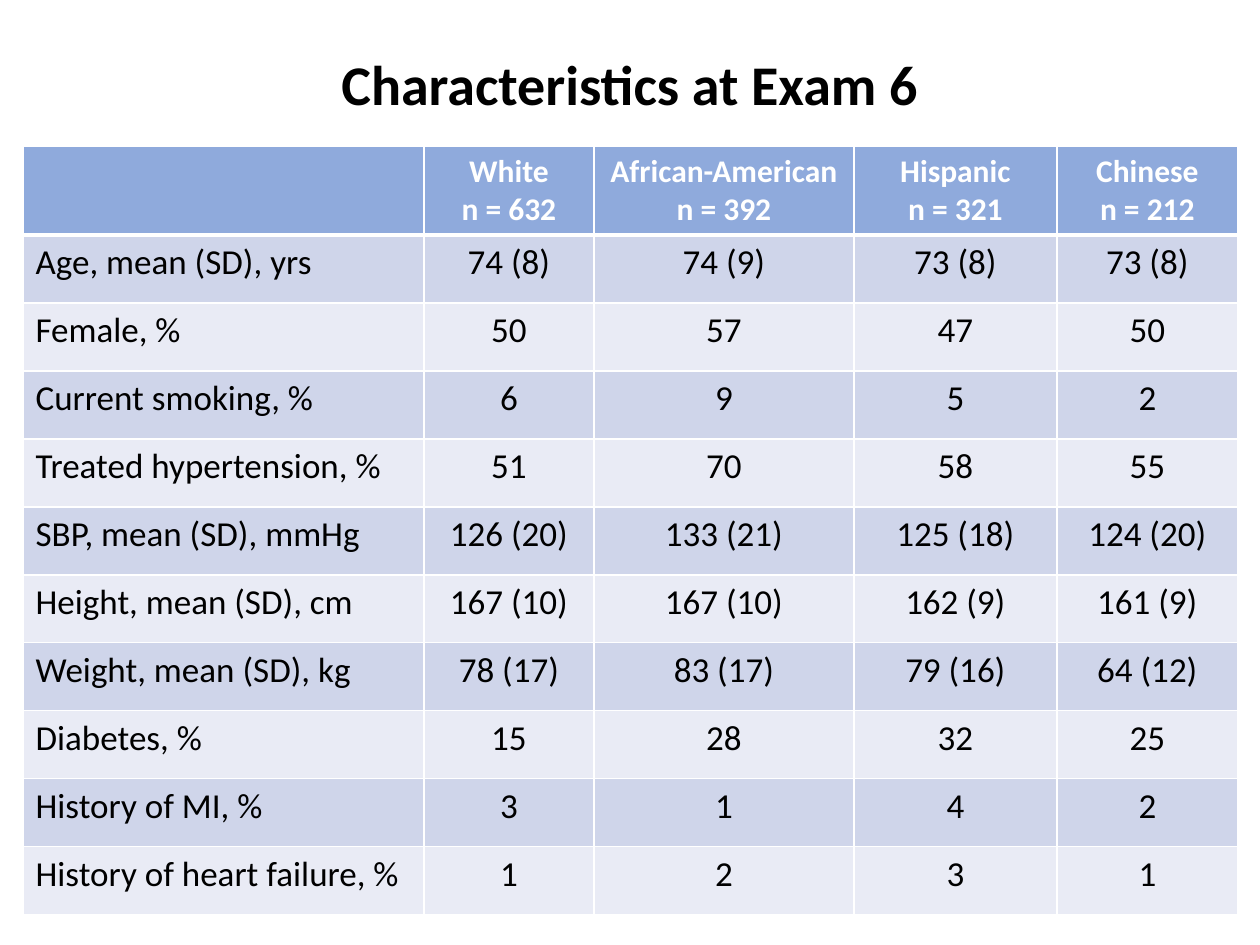
from dataclasses import dataclass

from lxml import etree
from pptx import Presentation
from pptx.dml.color import RGBColor
from pptx.enum.text import MSO_ANCHOR, PP_ALIGN
from pptx.oxml.ns import qn
from pptx.util import Emu, Pt

LEFT, CENTER = PP_ALIGN.LEFT, PP_ALIGN.CENTER
MIDDLE = MSO_ANCHOR.MIDDLE
EMU_PER_PX = 914400 / 126
FONT = "Calibri"
COLORS = {
    "text": "000000",
    "white": "FFFFFF",
    "header": "8FAADC",
    "odd": "CFD5EA",
    "even": "E9EBF5",
}


@dataclass(frozen=True)
class Style:
    size: int
    color: str
    bold: bool


@dataclass(frozen=True)
class Group:
    name: str
    n: int
    width: int


@dataclass(frozen=True)
class Measure:
    label: str
    values: tuple[str, ...]


TITLE = Style(32, "text", True)
HEADER = Style(18, "white", True)
BODY = Style(20, "text", False)

LABEL_WIDTH, HEADER_HEIGHT, ROW_HEIGHT = 401, 89, 68
GROUPS = [
    Group("White", 632, 170),
    Group("African-American", 392, 260),
    Group("Hispanic", 321, 203),
    Group("Chinese", 212, 181),
]
MEASURES = [
    Measure("Age, mean (SD), yrs", ("74 (8)", "74 (9)", "73 (8)", "73 (8)")),
    Measure("Female, %", ("50", "57", "47", "50")),
    Measure("Current smoking, %", ("6", "9", "5", "2")),
    Measure("Treated hypertension, %", ("51", "70", "58", "55")),
    Measure("SBP, mean (SD), mmHg", ("126 (20)", "133 (21)", "125 (18)", "124 (20)")),
    Measure("Height, mean (SD), cm", ("167 (10)", "167 (10)", "162 (9)", "161 (9)")),
    Measure("Weight, mean (SD), kg", ("78 (17)", "83 (17)", "79 (16)", "64 (12)")),
    Measure("Diabetes, %", ("15", "28", "32", "25")),
    Measure("History of MI, %", ("3", "1", "4", "2")),
    Measure("History of heart failure, %", ("1", "2", "3", "1")),
]


def px(n: int) -> Emu:
    """Turn pixels into EMU."""
    return Emu(round(n * EMU_PER_PX))


def add_text(tf, lines: list[str], style: Style, align) -> None:
    """Write one paragraph per line."""
    for i, line in enumerate(lines):
        p = tf.add_paragraph() if i else tf.paragraphs[0]
        p.alignment = align
        r = p.add_run()
        r.text = line
        r.font.name = FONT
        r.font.size = Pt(style.size)
        r.font.bold = style.bold
        r.font.color.rgb = RGBColor.from_string(COLORS[style.color])


def set_borders(cell, bottom: int, top: int) -> None:
    """Give a cell white borders, with widths in points."""
    tcPr = cell._tc.get_or_add_tcPr()
    widths = {"a:lnL": 1, "a:lnR": 1, "a:lnT": top, "a:lnB": bottom}
    for i, (tag, width) in enumerate(widths.items()):
        ln = etree.Element(qn(tag), w=str(Pt(width)))
        fill = etree.SubElement(ln, qn("a:solidFill"))
        etree.SubElement(fill, qn("a:srgbClr"), val=COLORS["white"])
        tcPr.insert(i, ln)


def fill_row(table, row: int, texts: list[list[str]], style: Style, fill: str) -> None:
    """Fill one table row, with its first cell aligned left."""
    for col, lines in enumerate(texts):
        cell = table.cell(row, col)
        cell.fill.solid()
        cell.fill.fore_color.rgb = RGBColor.from_string(COLORS[fill])
        set_borders(cell, bottom=1 if row else 3, top=3 if row == 1 else 1)
        add_text(cell.text_frame, lines, style, CENTER if col else LEFT)


def add_title(s, text: str) -> None:
    """Add the centred slide title."""
    tf = s.shapes.add_textbox(px(63), px(21), px(1134), px(125)).text_frame
    tf.word_wrap = True
    tf.vertical_anchor = MIDDLE
    add_text(tf, [text], TITLE, CENTER)


def add_characteristics(s) -> None:
    """Add the table of measures by group."""
    widths = [LABEL_WIDTH] + [g.width for g in GROUPS]
    heights = [HEADER_HEIGHT] + [ROW_HEIGHT] * len(MEASURES)
    table = s.shapes.add_table(
        len(heights), len(widths), px(23), px(146), px(sum(widths)), px(sum(heights))
    ).table
    for column, width in zip(table.columns, widths):
        column.width = px(width)
    for row, height in zip(table.rows, heights):
        row.height = px(height)
    heads = [[]] + [[g.name, f"n = {g.n}"] for g in GROUPS]
    fill_row(table, 0, heads, HEADER, "header")
    for i, m in enumerate(MEASURES, start=1):
        texts = [[text] for text in (m.label, *m.values)]
        fill_row(table, i, texts, BODY, "odd" if i % 2 else "even")


def main() -> None:
    """Build and save the slide."""
    prs = Presentation()
    prs.slide_width, prs.slide_height = px(1260), px(945)
    s = prs.slides.add_slide(prs.slide_layouts[6])
    add_title(s, "Characteristics at Exam 6")
    add_characteristics(s)
    prs.save("out.pptx")


if __name__ == "__main__":
    main()
